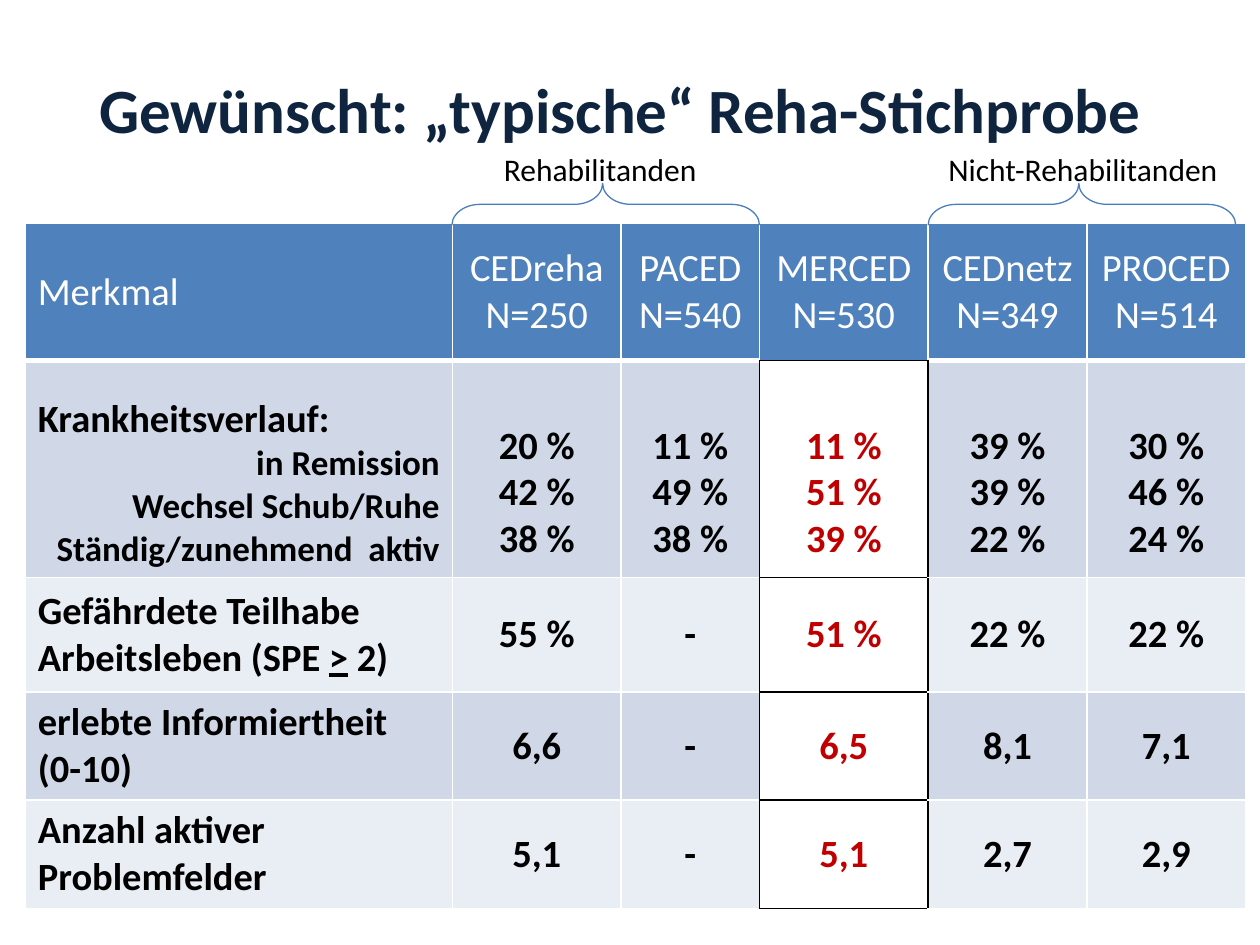
from dataclasses import dataclass

from lxml import etree
from pptx import Presentation
from pptx import util as u
from pptx.dml.color import RGBColor
from pptx.enum import shapes, text
from pptx.oxml.ns import qn

LEFT, CENTER, RIGHT = text.PP_ALIGN.LEFT, text.PP_ALIGN.CENTER, text.PP_ALIGN.RIGHT
MIDDLE, BOTTOM = text.MSO_ANCHOR.MIDDLE, text.MSO_ANCHOR.BOTTOM


@dataclass(frozen=True)
class Theme:
    font: str = "Calibri"
    white: str = "FFFFFF"
    black: str = "000000"
    title: str = "0F243E"
    header: str = "4F81BD"
    bands: tuple[str, str] = ("D0D8E8", "E9EDF4")
    highlight: str = "C00000"
    brace: str = "4B7EBC"
    title_size: int = 36
    table_size: int = 22
    detail_size: int = 20
    label_size: int = 18


THEME = Theme()


@dataclass(frozen=True)
class Line:
    text: str
    align: text.PP_ALIGN = CENTER
    size: int = THEME.table_size
    underlined: str = ""


@dataclass(frozen=True)
class Group:
    name: str
    label_left: float
    label_width: float
    brace_left: float


@dataclass(frozen=True)
class Row:
    label: list[Line]
    values: list[str]


GROUPS = [
    Group("Rehabilitanden", 9.91, 4.45, 11.79),
    Group("Nicht-Rehabilitanden", 18.87, 6.02, 21.39),
]
HEADERS = ["CEDreha N=250", "PACED\nN=540", "MERCED N=530", "CEDnetz N=349", "PROCED\nN=514"]
COURSE = ["in Remission", "Wechsel Schub/Ruhe", "Ständig/zunehmend  aktiv"]
ROWS = [
    Row([Line("Krankheitsverlauf:", LEFT)]
        + [Line(name, RIGHT, THEME.detail_size) for name in COURSE],
        ["20 %\n42 %\n38 %", "11 %\n49 %\n38 %", "11 %\n51 %\n39 %",
         "39 %\n39 %\n22 %", "30 %\n46 %\n24 %"]),
    Row([Line("Gefährdete Teilhabe Arbeitsleben (SPE > 2)", LEFT, underlined=">")],
        ["55 %", "-", "51 %", "22 %", "22 %"]),
    Row([Line("erlebte Informiertheit", LEFT), Line("(0-10)", LEFT)],
        ["6,6", "-", "6,5", "8,1", "7,1"]),
    Row([Line("Anzahl aktiver Problemfelder", LEFT)],
        ["5,1", "-", "5,1", "2,7", "2,9"]),
]
COLUMN_WIDTHS = [8.61, 3.4, 2.79, 3.4, 3.2, 3.2]
ROW_HEIGHTS = [2.77, 4.37, 2.31, 2.18, 2.18]
FOCUS_COLUMN = 3  # MERCED


def color(value: str) -> RGBColor:
    return RGBColor.from_string(value)


def set_font(paragraph, size: int, value: str, bold: bool = False) -> None:
    font = paragraph.font
    font.name, font.size, font.bold = THEME.font, u.Pt(size), bold
    font.color.rgb = color(value)


def write_lines(frame, lines: list[Line], value: str, bold: bool) -> None:
    for index, line in enumerate(lines):
        paragraph = frame.add_paragraph() if index else frame.paragraphs[0]
        paragraph.alignment = line.align
        parts = line.text.partition(line.underlined) if line.underlined else [line.text]
        for part in parts:
            run = paragraph.add_run()
            run.text = part
            if part == line.underlined:
                run.font.underline = True
        set_font(paragraph, line.size, value, bold)


def set_borders(cell, row: int, column: int) -> None:
    """White grid, with black lines around the body cells of the focus column."""
    body, focus = row > 0, column == FOCUS_COLUMN
    black_sides = {
        "L": body and column in (FOCUS_COLUMN, FOCUS_COLUMN + 1),
        "R": body and column in (FOCUS_COLUMN - 1, FOCUS_COLUMN),
        "T": body and focus,
        "B": focus,
    }
    properties = cell._tc.get_or_add_tcPr()
    for side, black in black_sides.items():
        points = 3 if side == "B" and not body and not focus else 1
        line = etree.SubElement(properties, qn(f"a:ln{side}"), w=str(u.Pt(points)))
        fill = etree.SubElement(line, qn("a:solidFill"))
        etree.SubElement(fill, qn("a:srgbClr"), val=THEME.black if black else THEME.white)


def fill_cell(cell, row: int, column: int, lines: list[Line]) -> None:
    focus = row > 0 and column == FOCUS_COLUMN
    set_borders(cell, row, column)
    if focus:
        cell.fill.background()
    else:
        cell.fill.solid()
        cell.fill.fore_color.rgb = color(THEME.bands[(row - 1) % 2] if row else THEME.header)
    # The course row lines its values up with the detail lines at the bottom
    cell.vertical_anchor = BOTTOM if row == 1 else MIDDLE
    if row == 1 and column:
        cell.margin_bottom = u.Cm(0.29)
    value = THEME.highlight if focus else THEME.black if row else THEME.white
    write_lines(cell.text_frame, lines, value, bold=row > 0)


def add_title(slide) -> None:
    title = slide.shapes.title
    title.left, title.top, title.width, title.height = map(u.Cm, (0.1, 0.13, 25.1, 3.33))
    title.fill.solid()
    title.fill.fore_color.rgb = color(THEME.white)
    title.text_frame.vertical_anchor = MIDDLE
    title.text_frame.text = "Gewünscht: „typische“ Reha-Stichprobe "
    paragraph = title.text_frame.paragraphs[0]
    paragraph.alignment, paragraph.line_spacing = CENTER, 1.5
    set_font(paragraph, THEME.title_size, THEME.title, bold=True)


def add_results_table(slide) -> None:
    table = slide.shapes.add_table(
        len(ROW_HEIGHTS), len(COLUMN_WIDTHS), u.Cm(0.51), u.Cm(4.5),
        u.Cm(sum(COLUMN_WIDTHS)), u.Cm(sum(ROW_HEIGHTS))).table
    for column, width in zip(table.columns, COLUMN_WIDTHS):
        column.width = u.Cm(width)
    for row, height in zip(table.rows, ROW_HEIGHTS):
        row.height = u.Cm(height)
    for row_index, row in enumerate([Row([Line("Merkmal", LEFT)], HEADERS), *ROWS]):
        values = [[Line(part) for part in value.split("\n")] for value in row.values]
        for column_index, lines in enumerate([row.label, *values]):
            fill_cell(table.cell(row_index, column_index), row_index, column_index, lines)


def add_group(slide, group: Group) -> None:
    label = slide.shapes.add_textbox(
        u.Cm(group.label_left), u.Cm(2.9), u.Cm(group.label_width), u.Cm(1.02))
    label.text_frame.word_wrap = False
    label.text_frame.text = group.name
    set_font(label.text_frame.paragraphs[0], THEME.label_size, THEME.black)

    brace = slide.shapes.add_shape(
        shapes.MSO_SHAPE.LEFT_BRACE, u.Cm(group.brace_left), u.Cm(1.02), u.Cm(0.84), u.Cm(6.2))
    brace.rotation = 90
    brace.adjustments[0], brace.adjustments[1] = 0.68, 0.51
    brace.shadow.inherit = False
    brace.fill.background()
    brace.line.color.rgb = color(THEME.brace)
    brace.line.width = u.Pt(0.75)


def main() -> None:
    presentation = Presentation()
    presentation.slide_width, presentation.slide_height = u.Cm(25.4), u.Cm(19.05)
    slide = presentation.slides.add_slide(presentation.slide_layouts[5])  # title only
    add_title(slide)
    add_results_table(slide)
    # Group labels and braces above the table
    for group in GROUPS:
        add_group(slide, group)
    presentation.save("out.pptx")


if __name__ == "__main__":
    main()
